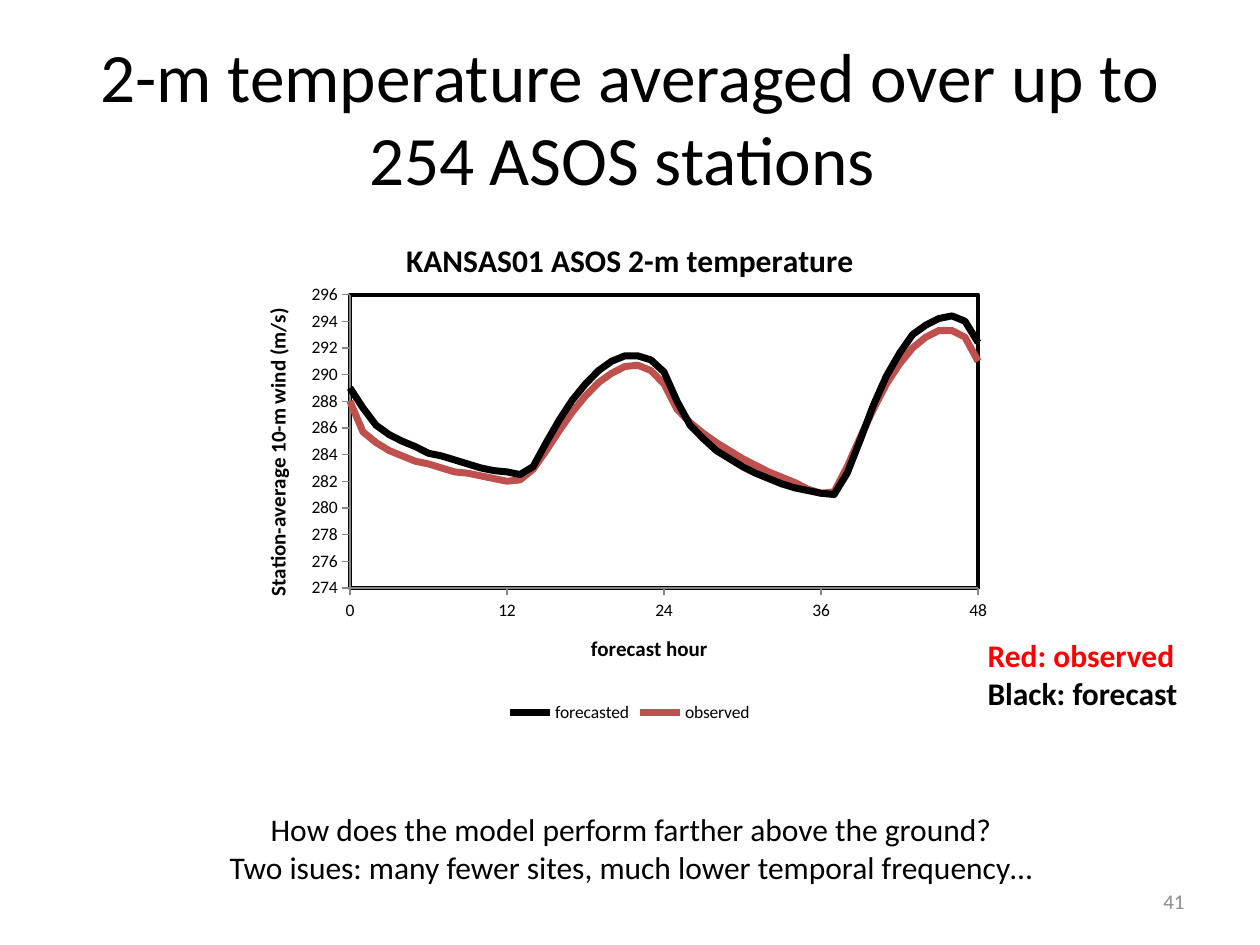
from lxml import etree
from pptx import Presentation
from pptx.chart.data import XyChartData
from pptx.dml.color import RGBColor
from pptx.enum.chart import XL_CHART_TYPE as ChartType, XL_LEGEND_POSITION as LegendPos
from pptx.enum.chart import XL_TICK_MARK as TickMark
from pptx.enum.text import MSO_ANCHOR as Anchor, PP_ALIGN as Align
from pptx.oxml import parse_xml
from pptx.oxml.ns import nsdecls, qn
from pptx.util import Inches, Pt

THEME = {
    "font": "Calibri",
    "ink": RGBColor(0, 0, 0), "paper": RGBColor(255, 255, 255),
    "red": RGBColor(255, 0, 0), "observed": RGBColor(0xC0, 0x50, 0x4D),
    "axis": RGBColor(0x86, 0x86, 0x86), "number": RGBColor(0x8C, 0x8C, 0x8C),
    "title": Pt(39.6), "body": Pt(18), "axis_title": Pt(12), "small": Pt(10),
}

prs = Presentation()
prs.slide_width, prs.slide_height = Inches(10), Inches(7.5)
slide = prs.slides.add_slide(prs.slide_layouts[5])


def box(left, top, width, height):
    """Turn shares of the slide's size into lengths."""
    return (int(prs.slide_width * left), int(prs.slide_height * top),
            int(prs.slide_width * width), int(prs.slide_height * height))


def style(font, size, color, bold=False):
    font.name, font.size, font.bold = THEME["font"], size, bold
    font.color.rgb = color


# Title
title = slide.shapes.title
title.left, title.top, title.width, title.height = box(0.05, 0.04, 0.9, 0.167)
title.text_frame.text = "2-m temperature averaged over up to 254 ASOS stations "
title.text_frame.vertical_anchor = Anchor.MIDDLE
title.text_frame.paragraphs[0].alignment = Align.CENTER
style(title.text_frame.paragraphs[0].runs[0].font, THEME["title"], THEME["ink"])

# Hourly station averages, forecast hours 0 to 48
temperatures = {
    "forecasted": (THEME["ink"], [
        289.0, 287.5, 286.2, 285.5, 285.0, 284.6, 284.1, 283.9, 283.6, 283.3, 283.0, 282.8,
        282.7, 282.5, 283.1, 284.9, 286.6, 288.1, 289.3, 290.3, 291.0, 291.4, 291.4, 291.1,
        290.2, 288.0, 286.2, 285.2, 284.3, 283.7, 283.1, 282.6, 282.2, 281.8, 281.5, 281.3,
        281.1, 281.0, 282.6, 285.1, 287.7, 289.9, 291.6, 293.0, 293.7, 294.2, 294.4, 294.0,
        292.4]),
    "observed": (THEME["observed"], [
        288.0, 285.7, 284.9, 284.3, 283.9, 283.5, 283.3, 283.0, 282.7, 282.6, 282.4, 282.2,
        282.0, 282.1, 282.9, 284.3, 285.8, 287.2, 288.4, 289.4, 290.1, 290.6, 290.7, 290.3,
        289.3, 287.4, 286.4, 285.6, 284.9, 284.3, 283.7, 283.2, 282.7, 282.3, 281.9, 281.4,
        281.1, 281.2, 283.1, 285.3, 287.4, 289.3, 290.8, 292.0, 292.8, 293.3, 293.3, 292.8,
        291.0]),
}
chart_data = XyChartData(number_format="General")
for name, (_, values) in temperatures.items():
    points = chart_data.add_series(name)
    for hour, value in enumerate(values):
        points.add_data_point(hour, value)
chart = slide.shapes.add_chart(ChartType.XY_SCATTER_LINES_NO_MARKERS,
                               *box(0.206, 0.229, 0.588, 0.541), chart_data).chart
style(chart.font, THEME["small"], THEME["ink"])

chart.has_title = True
chart.chart_title.include_in_layout = False
chart.chart_title.text_frame.text = "KANSAS01 ASOS 2-m temperature"
style(chart.chart_title.text_frame.paragraphs[0].runs[0].font,
      THEME["body"], THEME["ink"], True)
chart.has_legend = True
chart.legend.position = LegendPos.BOTTOM
chart.legend.include_in_layout = False

for axis, label, low, high, step in (
        (chart.category_axis, "forecast hour", 0, 48, 12),
        (chart.value_axis, "Station-average 10-m wind (m/s)", 274, 296, 2)):
    axis.minimum_scale, axis.maximum_scale, axis.major_unit = low, high, step
    axis.has_major_gridlines = False
    axis.major_tick_mark, axis.minor_tick_mark = TickMark.OUTSIDE, TickMark.NONE
    axis.format.line.color.rgb = THEME["axis"]
    axis.format.line.width = Pt(0.75)
    axis.axis_title.text_frame.text = label
    style(axis.axis_title.text_frame.paragraphs[0].runs[0].font,
          THEME["axis_title"], THEME["ink"], True)

for series, (color, _) in zip(chart.plots[0].series, temperatures.values()):
    series.smooth = False
    series.format.line.color.rgb = color
    series.format.line.width = Pt(4)

# Fixed inner plot area with a heavy frame
plot_area = chart.plots[0]._element.getparent()
for old_layout in plot_area.findall(qn("c:layout")):
    plot_area.remove(old_layout)
layout = parse_xml(f'<c:layout {nsdecls("c")}><c:manualLayout/></c:layout>')
for tag, val in (("layoutTarget", "inner"), ("xMode", "edge"), ("yMode", "edge"),
                 ("x", 0.122), ("y", 0.153), ("w", 0.848), ("h", 0.574)):
    etree.SubElement(layout[0], qn(f"c:{tag}")).set("val", str(val))
plot_area.insert(0, layout)
plot_area.append(parse_xml(
    f'<c:spPr {nsdecls("c", "a")}>'
    f'<a:solidFill><a:srgbClr val="{THEME["paper"]}"/></a:solidFill>'
    f'<a:ln w="{Pt(2.25)}"><a:solidFill><a:srgbClr val="{THEME["ink"]}"/></a:solidFill></a:ln>'
    '</c:spPr>'))

# Remarks, colour key and page number
ink, red = THEME["ink"], THEME["red"]
for place, anchor, align, size, bold, lines in (
        (box(0.168, 0.851, 0.666, 0.095), Anchor.TOP, Align.CENTER, THEME["body"], False,
         [("How does the model perform farther above the ground?", ink),
          ("Two isues: many fewer sites, much lower temporal frequency…", ink)]),
        (box(0.774, 0.667, 0.173, 0.095), Anchor.TOP, Align.LEFT, THEME["body"], True,
         [("Red: observed", red), ("Black: forecast", ink)]),
        (box(0.717, 0.927, 0.233, 0.053), Anchor.MIDDLE, Align.RIGHT, THEME["axis_title"], False,
         [("41", THEME["number"])])):
    frame = slide.shapes.add_textbox(*place).text_frame
    frame.word_wrap = len(lines) == 1
    frame.vertical_anchor = anchor
    frame.text = "\n".join(text for text, _ in lines)
    for paragraph, (_, color) in zip(frame.paragraphs, lines):
        paragraph.alignment = align
        style(paragraph.runs[0].font, size, color, bold)

prs.save("out.pptx")
